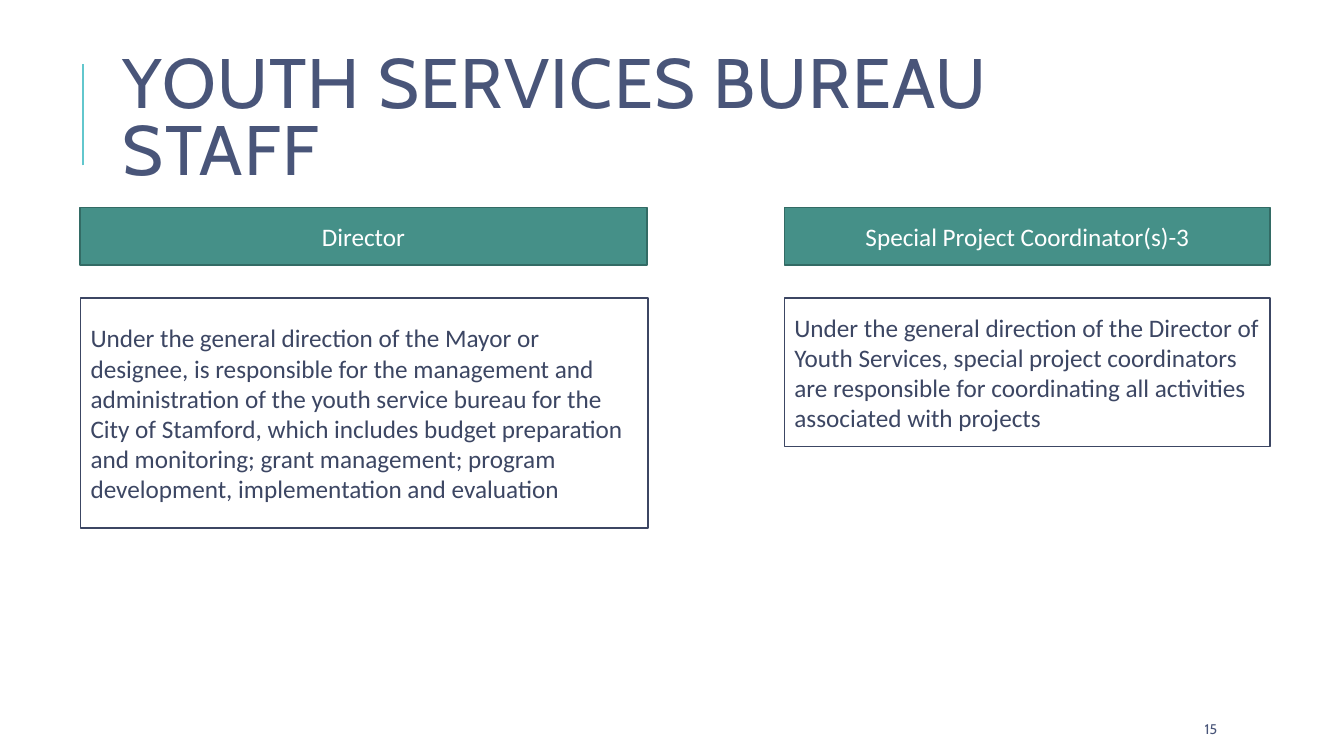
from dataclasses import dataclass

from lxml import etree
from pptx import Presentation
from pptx.dml.color import RGBColor
from pptx.enum import shapes, text
from pptx.oxml import ns
from pptx.util import Inches, Pt

COLORS = {
    "accent": "62C7CD",
    "title": "495579",
    "header": "459088",
    "header_edge": "336B65",
    "body": "3C4663",
    "white": "FFFFFF",
}
HEADER_TOP, HEADER_HEIGHT, BODY_TOP = 2.06, 0.57, 2.96


@dataclass
class TextStyle:
    size: float
    font: str
    color: str
    align: text.PP_ALIGN = text.PP_ALIGN.LEFT
    line_spacing: float = 1.0
    tracking: float = 0


@dataclass
class Role:
    name: str
    duties: str
    left: float
    body_left: float
    width: float
    body_height: float


TITLE = TextStyle(50, "Cabin", "title", line_spacing=0.8, tracking=1)
NUMBER = TextStyle(10, "Cabin", "title")
HEADER = TextStyle(18, "Calibri", "white", text.PP_ALIGN.CENTER)
BODY = TextStyle(18, "Calibri", "body")

ROLES = [
    Role(
        "Director",
        "Under the general direction of the Mayor or designee, is responsible for "
        "the management and administration of the youth service bureau for the "
        "City of Stamford, which includes budget preparation and monitoring; grant "
        "management; program development, implementation and evaluation",
        0.79, 0.8, 5.63, 2.28,
    ),
    Role(
        "Special Project Coordinator(s)-3",
        "Under the general direction of the Director of Youth Services, special "
        "project coordinators are responsible for coordinating all activities "
        "associated with projects",
        7.78, 7.78, 4.82, 1.47,
    ),
]


def rgb(name: str) -> RGBColor:
    return RGBColor.from_string(COLORS[name])


def write(box, words: str, style: TextStyle) -> None:
    frame = box.text_frame
    frame.word_wrap = True
    frame.vertical_anchor = text.MSO_ANCHOR.MIDDLE
    para = frame.paragraphs[0]
    para.alignment = style.align
    para.line_spacing = style.line_spacing
    span = para.add_run()
    span.text = words
    span.font.size = Pt(style.size)
    span.font.name = style.font
    span.font.color.rgb = rgb(style.color)
    if style.tracking:
        span.font._element.set("spc", str(round(style.tracking * 100)))


def add_label(page, words: str, area: tuple, style: TextStyle) -> None:
    write(page.shapes.add_textbox(*map(Inches, area)), words, style)


def add_panel(page, words: str, area: tuple, fill: str, edge: str,
              style: TextStyle) -> None:
    box = page.shapes.add_shape(shapes.MSO_SHAPE.RECTANGLE, *map(Inches, area))
    box.shadow.inherit = False
    box.fill.solid()
    box.fill.fore_color.rgb = rgb(fill)
    box.line.color.rgb = rgb(edge)
    box.line.width = Pt(1.25)
    write(box, words, style)


def add_accent(page) -> None:
    line = page.shapes.add_connector(
        shapes.MSO_CONNECTOR.STRAIGHT, *map(Inches, (0.82, 1.64, 0.82, 0.64)))
    line.line.color.rgb = rgb("accent")
    line.line.width = Pt(1.5)
    etree.SubElement(line._element.spPr, ns.qn("a:effectLst"))


def main() -> None:
    deck = Presentation()
    deck.slide_width, deck.slide_height = Inches(13.33), Inches(7.5)
    page = deck.slides.add_slide(deck.slide_layouts[6])

    # Title and page number
    add_accent(page)
    add_label(page, "YOUTH SERVICES BUREAU STAFF", (1.12, 0.39, 10.63, 1.64), TITLE)
    add_label(page, "15", (11.85, 7.08, 1.06, 0.3), NUMBER)

    # One header and one description per role
    for role in ROLES:
        add_panel(page, role.name, (role.left, HEADER_TOP, role.width, HEADER_HEIGHT),
                  "header", "header_edge", HEADER)
        add_panel(page, role.duties,
                  (role.body_left, BODY_TOP, role.width, role.body_height),
                  "white", "body", BODY)

    deck.save("out.pptx")


if __name__ == "__main__":
    main()
